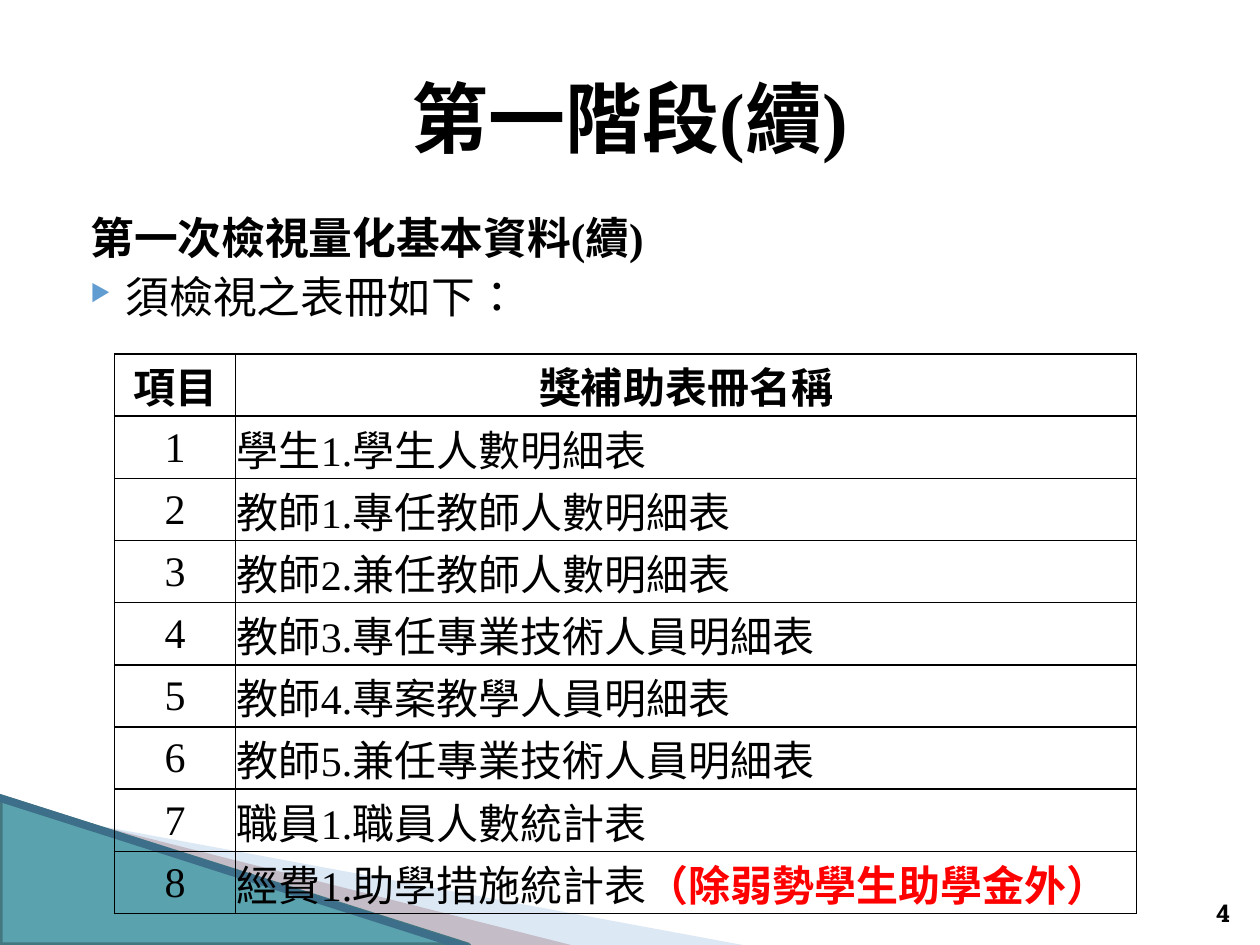
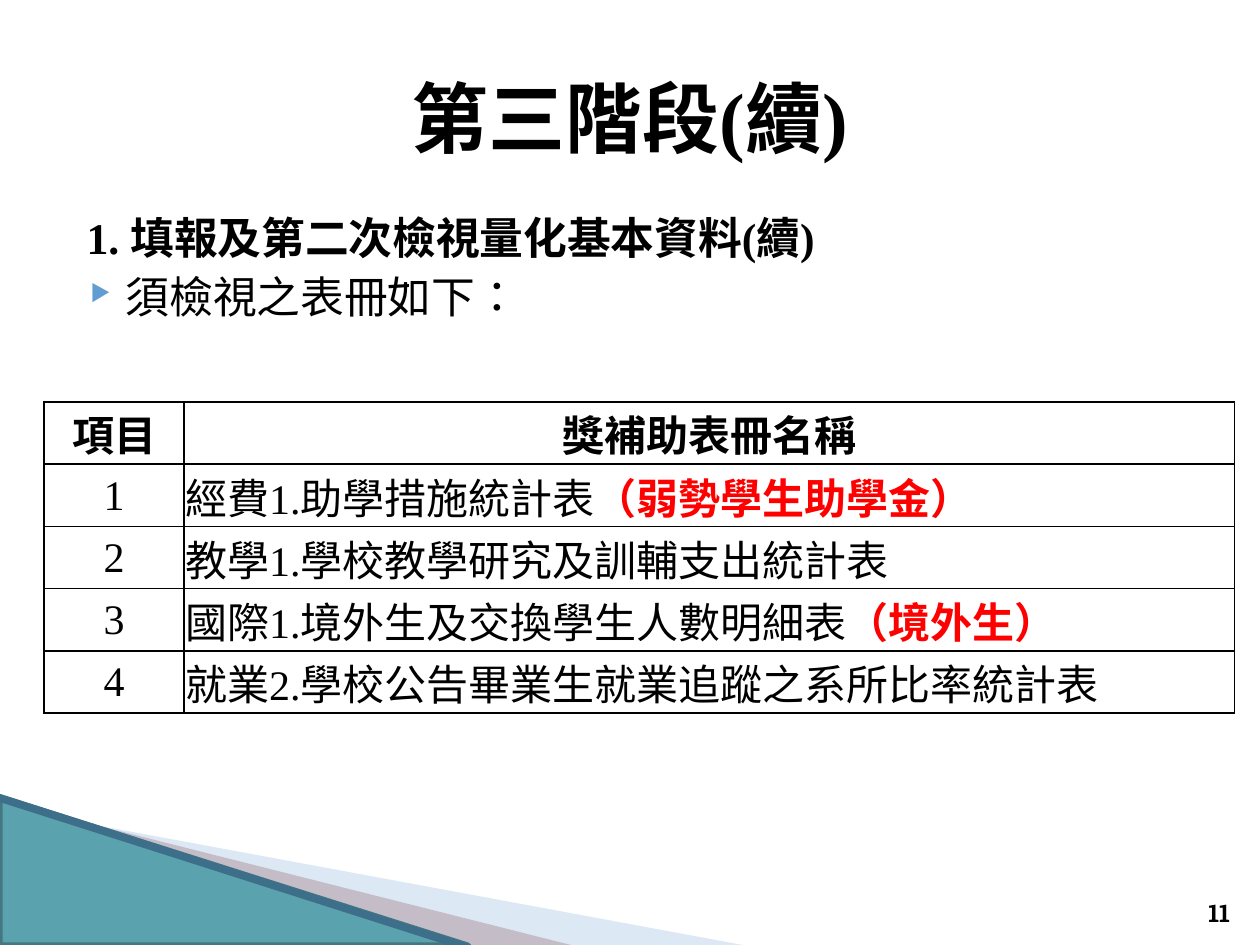
from dataclasses import dataclass

from lxml.etree import SubElement
from pptx import Presentation
from pptx.dml.color import RGBColor
from pptx.enum.lang import MSO_LANGUAGE_ID
from pptx.enum.shapes import MSO_CONNECTOR, MSO_SHAPE
from pptx.enum.text import MSO_ANCHOR, PP_ALIGN
from pptx.oxml import parse_xml
from pptx.oxml.ns import nsdecls, qn
from pptx.slide import Slide
from pptx.text.text import Font
from pptx.util import Inches, Pt


@dataclass(frozen=True)
class Theme:
    ink: str = "000000"
    alert: str = "FF0000"
    bullet: str = "629DD1"
    pale_band: str = "ABC6E6"
    mauve_band: str = "C4BCC6"
    wedge: str = "5AA2AE"
    wedge_edge: str = "437881"
    wedge_line: str = "3D6F8A"
    serif: str = "Times New Roman"
    chinese: str = "Noto Sans CJK SC"
    slab: str = "Roboto Slab"
    title_size: int = 44
    body_size: int = 25
    table_size: int = 24
    number_size: int = 14


THEME = Theme()


@dataclass(frozen=True)
class Box:
    left: float
    top: float
    width: float
    height: float

    def lengths(self) -> list[int]:
        return [Inches(side) for side in (self.left, self.top, self.width, self.height)]


@dataclass(frozen=True)
class Band:
    points: tuple[tuple[float, float], ...]
    color: str
    opacity: int = 100


@dataclass(frozen=True)
class Report:
    name: str
    note: str = ""


@dataclass(frozen=True)
class Stage:
    title: str
    heading: str
    margin: float
    indent: float
    number: int
    table_box: Box
    item_width: float
    reports: tuple[Report, ...]


TITLE_BOX = Box(0, 0.3, 10, 1.25)
BODY_BOX = Box(0.5, 1.62, 9, 4.8)
NUMBER_BOX = Box(9.25, 7.01, 0.61, 0.4)
WEDGE_BOX = Box(-0.01, 6.33, 3.72, 1.18)
HEADERS = ("項目", "獎補助表冊名稱")
CHECKLIST_LEAD = "須檢視之表冊如下："

BANDS = (
    Band(((0.55, 6.51), (5.95, 7.51), (4.56, 7.51), (0.55, 6.5)), THEME.pale_band, 40),
    Band(((0.53, 6.49), (4.57, 7.51), (3.72, 7.52), (0.54, 6.5)), THEME.mauve_band),
)

STAGES = (
    Stage(
        "第一階段(續)", "第一次檢視量化基本資料(續)", 0.12, 0, 4, Box(0.91, 2.81, 8.11, 4.44), 0.96,
        (
            Report("學生1.學生人數明細表"),
            Report("教師1.專任教師人數明細表"),
            Report("教師2.兼任教師人數明細表"),
            Report("教師3.專任專業技術人員明細表"),
            Report("教師4.專案教學人員明細表"),
            Report("教師5.兼任專業技術人員明細表"),
            Report("職員1.職員人數統計表"),
            Report("經費1.助學措施統計表", "（除弱勢學生助學金外）"),
        ),
    ),
    Stage(
        "第三階段(續)", "1. 填報及第二次檢視量化基本資料(續)", 0.43, -0.34, 11, Box(0.35, 3.19, 9.45, 2.47), 1.11,
        (
            Report("經費1.助學措施統計表", "（弱勢學生助學金）"),
            Report("教學1.學校教學研究及訓輔支出統計表"),
            Report("國際1.境外生及交換學生人數明細表", "（境外生）"),
            Report("就業2.學校公告畢業生就業追蹤之系所比率統計表"),
        ),
    ),
)


def rgb(color: str) -> RGBColor:
    return RGBColor.from_string(color)


def set_font(font: Font, size: int, bold: bool, name: str = THEME.serif, color: str = THEME.ink) -> None:
    font.size = Pt(size)
    font.bold = bold
    font.name = name
    font.color.rgb = rgb(color)


def draw_band(page: Slide, band: Band) -> None:
    start, *rest = [(Inches(x), Inches(y)) for x, y in band.points]
    builder = page.shapes.build_freeform(*start)
    builder.add_line_segments(rest)
    shape = builder.convert_to_shape()
    shape.shadow.inherit = False
    shape.line.fill.background()
    shape.fill.solid()
    shape.fill.fore_color.rgb = rgb(band.color)
    if band.opacity < 100:
        color = shape.fill._xPr.find(qn("a:solidFill"))[0]
        SubElement(color, qn("a:alpha"), val=str(band.opacity * 1000))


def draw_corner(page: Slide) -> None:
    for band in BANDS:
        draw_band(page, band)
    wedge = page.shapes.add_shape(MSO_SHAPE.RIGHT_TRIANGLE, *WEDGE_BOX.lengths())
    wedge.shadow.inherit = False
    wedge.fill.solid()
    wedge.fill.fore_color.rgb = rgb(THEME.wedge)
    wedge.line.color.rgb = rgb(THEME.wedge_edge)
    wedge.line.width = Pt(4.33)
    edge = page.shapes.add_connector(
        MSO_CONNECTOR.STRAIGHT, Inches(-0.01), Inches(6.33), Inches(3.71), Inches(7.52)
    )
    edge.line.color.rgb = rgb(THEME.wedge_line)
    edge.line.width = Pt(4.33)
    SubElement(edge._element.spPr, qn("a:effectLst"))


def add_text(page: Slide, box: Box, lines: list[str], anchor: MSO_ANCHOR, align: PP_ALIGN) -> list:
    frame = page.shapes.add_textbox(*box.lengths()).text_frame
    frame.word_wrap = True
    frame.vertical_anchor = anchor
    frame.text = "\n".join(lines)
    for para in frame.paragraphs:
        para.alignment = align
    return list(frame.paragraphs)


def set_indent(para, margin: float, indent: float) -> None:
    properties = para._p.get_or_add_pPr()
    properties.set("marL", str(Inches(margin)))
    properties.set("indent", str(Inches(indent)))


def add_bullet(para) -> None:
    properties = para._p.get_or_add_pPr()
    default_run = properties.find(qn("a:defRPr"))
    for markup in (
        f'<a:buClr {nsdecls("a")}><a:srgbClr val="{THEME.bullet}"/></a:buClr>',
        f'<a:buSzPct {nsdecls("a")} val="53000"/>',
        f'<a:buChar {nsdecls("a")} char="▶"/>',
    ):
        default_run.addprevious(parse_xml(markup))


def draw_body(page: Slide, stage: Stage) -> None:
    heading, lead = add_text(
        page, BODY_BOX, [stage.heading, CHECKLIST_LEAD], MSO_ANCHOR.TOP, PP_ALIGN.LEFT
    )
    for para, bold in ((heading, True), (lead, False)):
        para.space_before = Pt(4)
        set_font(para.font, THEME.body_size, bold)
    set_indent(heading, stage.margin, stage.indent)
    set_indent(lead, 0.4, -0.28)
    add_bullet(lead)
    lead.runs[0].font.language_id = MSO_LANGUAGE_ID.TRADITIONAL_CHINESE


def style_cell(cell) -> None:
    cell.vertical_anchor = MSO_ANCHOR.MIDDLE
    cell.margin_left = cell.margin_right = cell.margin_top = Inches(0.01)
    cell.margin_bottom = 0
    cell.fill.background()
    properties = cell._tc.get_or_add_tcPr()
    for position, side in enumerate(("lnL", "lnR", "lnT", "lnB")):
        border = parse_xml(
            f'<a:{side} {nsdecls("a")} w="{Pt(1)}"><a:solidFill>'
            f'<a:srgbClr val="{THEME.ink}"/></a:solidFill></a:{side}>'
        )
        properties.insert(position, border)


def fill_cell(cell, text: str, align: PP_ALIGN, header: bool = False, note: str = "") -> None:
    style_cell(cell)
    para = cell.text_frame.paragraphs[0]
    para.alignment = align
    set_font(para.font, THEME.table_size, header, THEME.chinese if header else THEME.serif)
    para.add_run().text = text
    if note:
        span = para.add_run()
        span.text = note
        span.font.bold = True
        span.font.color.rgb = rgb(THEME.alert)


def draw_table(page: Slide, stage: Stage) -> None:
    row_count = len(stage.reports) + 1
    box = stage.table_box
    table = page.shapes.add_table(row_count, len(HEADERS), *box.lengths()).table
    table.first_row = table.horz_banding = False
    for column, width in zip(table.columns, (stage.item_width, box.width - stage.item_width)):
        column.width = Inches(width)
    for row in table.rows:
        row.height = Inches(box.height / row_count)
    for index, header in enumerate(HEADERS):
        fill_cell(table.cell(0, index), header, PP_ALIGN.CENTER, header=True)
    for index, report in enumerate(stage.reports, start=1):
        fill_cell(table.cell(index, 0), str(index), PP_ALIGN.CENTER)
        fill_cell(table.cell(index, 1), report.name, PP_ALIGN.LEFT, note=report.note)


def draw_stage(page: Slide, stage: Stage) -> None:
    draw_corner(page)
    (title,) = add_text(page, TITLE_BOX, [stage.title], MSO_ANCHOR.MIDDLE, PP_ALIGN.CENTER)
    set_font(title.font, THEME.title_size, True)
    draw_body(page, stage)
    (number,) = add_text(page, NUMBER_BOX, [str(stage.number)], MSO_ANCHOR.BOTTOM, PP_ALIGN.RIGHT)
    set_font(number.font, THEME.number_size, True, THEME.slab)
    draw_table(page, stage)


def main() -> None:
    deck = Presentation()
    deck.slide_width = Inches(10)
    deck.slide_height = Inches(7.5)
    for stage in STAGES:
        draw_stage(deck.slides.add_slide(deck.slide_layouts[6]), stage)
    deck.save("out.pptx")


if __name__ == "__main__":
    main()
